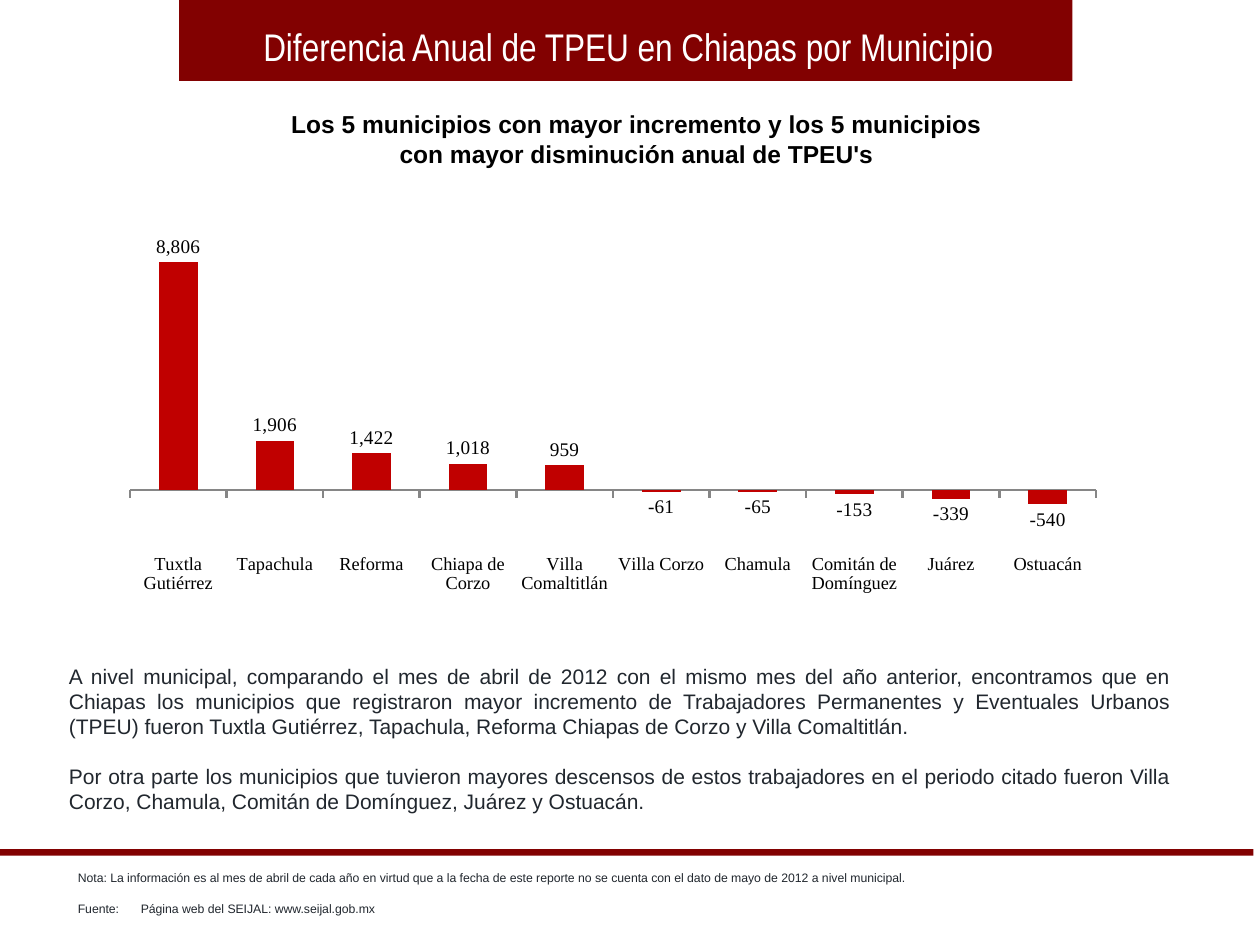
import pptx
import pptx.chart.data
import pptx.dml.color
import pptx.enum.chart
import pptx.enum.shapes
import pptx.enum.text
import pptx.oxml
import pptx.util
from pptx.util import Cm

Pt = pptx.util.Pt
ALIGN = pptx.enum.text.PP_ALIGN
ANCHOR = pptx.enum.text.MSO_ANCHOR
CHART = pptx.enum.chart

# Content
COLORS = {"band": "820101", "bar": "C00000", "axis": "868686",
          "body": "21272E", "black": "000000", "white": "FFFFFF"}

BANDS = [(3.61, 0, 18.01, 1.63), (0, 17.12, 25.27, 0.13)]

MUNICIPALITIES = [
    ("Tuxtla Gutiérrez", 8806), ("Tapachula", 1906), ("Reforma", 1422),
    ("Chiapa de Corzo", 1018), ("Villa Comaltitlán", 959),
    ("Villa Corzo", -61), ("Chamula", -65), ("Comitán de Domínguez", -153),
    ("Juárez", -339), ("Ostuacán", -540),
]
CHART_BOX = (2.21, 3.84, 20.5, 9.09)
PLOT_AREA = {"x": 0.02, "y": 0.09, "w": 0.95, "h": 0.69}

TEXTS = [
    {"box": (3.71, 0.33, 17.91, 1.19), "align": ALIGN.CENTER, "gap": 0,
     "font": {"name": "Arial Narrow", "size": Pt(22)}, "color": "white",
     "lines": ["Diferencia Anual de TPEU en Chiapas por Municipio"]},
    {"box": (1.47, 2.08, 22.73, 1.45), "align": ALIGN.CENTER, "gap": 0,
     "font": {"name": "Arial", "size": Pt(14), "bold": True}, "color": "black",
     "lines": ["Los 5 municipios con mayor incremento y los 5 municipios",
               "con mayor disminución anual de TPEU's"]},
    {"box": (1.14, 12.93, 22.73, 3.91), "align": ALIGN.JUSTIFY, "gap": 14,
     "anchor": ANCHOR.MIDDLE,
     "font": {"name": "Arial", "size": Pt(12)}, "color": "body",
     "lines": [
         "A nivel municipal, comparando el mes de abril de 2012 con el mismo "
         "mes del año anterior, encontramos que en Chiapas los municipios que "
         "registraron mayor incremento de Trabajadores Permanentes y "
         "Eventuales Urbanos (TPEU) fueron Tuxtla Gutiérrez, Tapachula, "
         "Reforma Chiapas de Corzo y Villa Comaltitlán.",
         "Por otra parte los municipios que tuvieron mayores descensos de "
         "estos trabajadores en el periodo citado fueron Villa Corzo, "
         "Chamula, Comitán de Domínguez, Juárez y Ostuacán."]},
    {"box": (1.32, 17.42, 17.48, 1.14), "align": ALIGN.LEFT, "gap": 9,
     "font": {"name": "Arial", "size": Pt(7)}, "color": "body",
     "lines": [
         "Nota: La información es al mes de abril de cada año en virtud que a "
         "la fecha de este reporte no se cuenta con el dato de mayo de 2012 a "
         "nivel municipal.",
         "Fuente:\tPágina web del SEIJAL: www.seijal.gob.mx"]},
]


def rgb(key):
    return pptx.dml.color.RGBColor.from_string(COLORS[key])


def place(box):
    return [Cm(length) for length in box]


def apply(target, values):
    for attribute, value in values.items():
        setattr(target, attribute, value)


def add_band(slide, box):
    band = slide.shapes.add_shape(
        pptx.enum.shapes.MSO_SHAPE.RECTANGLE, *place(box))
    band.shadow.inherit = False
    band.fill.solid()
    band.fill.fore_color.rgb = rgb("band")
    band.line.fill.background()


def add_text(slide, content):
    frame = slide.shapes.add_textbox(*place(content["box"])).text_frame
    apply(frame, {"word_wrap": True,
                  "vertical_anchor": content.get("anchor", ANCHOR.TOP)})
    for index, line in enumerate(content["lines"]):
        paragraph = frame.add_paragraph() if index else frame.paragraphs[0]
        paragraph.alignment = content["align"]
        if index and content["gap"]:
            paragraph.space_before = Pt(content["gap"])
        run = paragraph.add_run()
        run.text = line
        apply(run.font, content["font"])
        run.font.color.rgb = rgb(content["color"])


def add_difference_chart(slide):
    names, differences = zip(*MUNICIPALITIES)
    data = pptx.chart.data.CategoryChartData(number_format="#,##0")
    data.categories = names
    data.add_series("TPEU", differences)
    chart = slide.shapes.add_chart(
        CHART.XL_CHART_TYPE.COLUMN_CLUSTERED, *place(CHART_BOX), data).chart
    apply(chart, {"has_legend": False, "has_title": False})
    apply(chart.font, {"name": "Times New Roman", "size": Pt(10)})
    chart.font.color.rgb = rgb("black")

    # Bars and their values
    plot = chart.plots[0]
    apply(plot, {"gap_width": 150, "vary_by_categories": False,
                 "has_data_labels": True})
    bars = plot.series[0]
    bars.invert_if_negative = False
    bars.format.fill.solid()
    bars.format.fill.fore_color.rgb = rgb("bar")
    apply(plot.data_labels, {
        "show_value": True, "number_format": "#,##0",
        "number_format_is_linked": False,
        "position": CHART.XL_LABEL_POSITION.OUTSIDE_END})
    apply(plot.data_labels.font, {"name": "Times New Roman", "size": Pt(11)})
    plot.data_labels.font.color.rgb = rgb("black")

    # Axes
    apply(chart.value_axis, {"visible": False, "minimum_scale": -2000,
                             "maximum_scale": 10000,
                             "has_major_gridlines": False})
    municipality_axis = chart.category_axis
    apply(municipality_axis, {
        "tick_label_position": CHART.XL_TICK_LABEL_POSITION.LOW,
        "major_tick_mark": CHART.XL_TICK_MARK.OUTSIDE,
        "has_major_gridlines": False})
    municipality_axis.tick_labels.font.size = Pt(10.5)
    municipality_axis.format.line.width = Pt(1.5)
    municipality_axis.format.line.color.rgb = rgb("axis")

    # Fixed inner plot area
    area = chart.element.chart.plotArea
    for layout in area.xpath("c:layout"):
        area.remove(layout)
    modes = "".join(f'<c:{side}Mode val="edge"/>' for side in "xy")
    sizes = "".join(f'<c:{side} val="{share}"/>'
                    for side, share in PLOT_AREA.items())
    area.insert(0, pptx.oxml.parse_xml(
        '<c:layout xmlns:c="http://schemas.openxmlformats.org/drawingml/2006/chart">'
        f'<c:manualLayout><c:layoutTarget val="inner"/>{modes}{sizes}'
        '</c:manualLayout></c:layout>'))


def main():
    deck = pptx.Presentation()
    apply(deck, {"slide_width": Cm(25.4), "slide_height": Cm(19.05)})
    slide = deck.slides.add_slide(deck.slide_layouts[6])
    for box in BANDS:
        add_band(slide, box)
    add_difference_chart(slide)
    for content in TEXTS:
        add_text(slide, content)
    deck.save("out.pptx")


if __name__ == "__main__":
    main()
